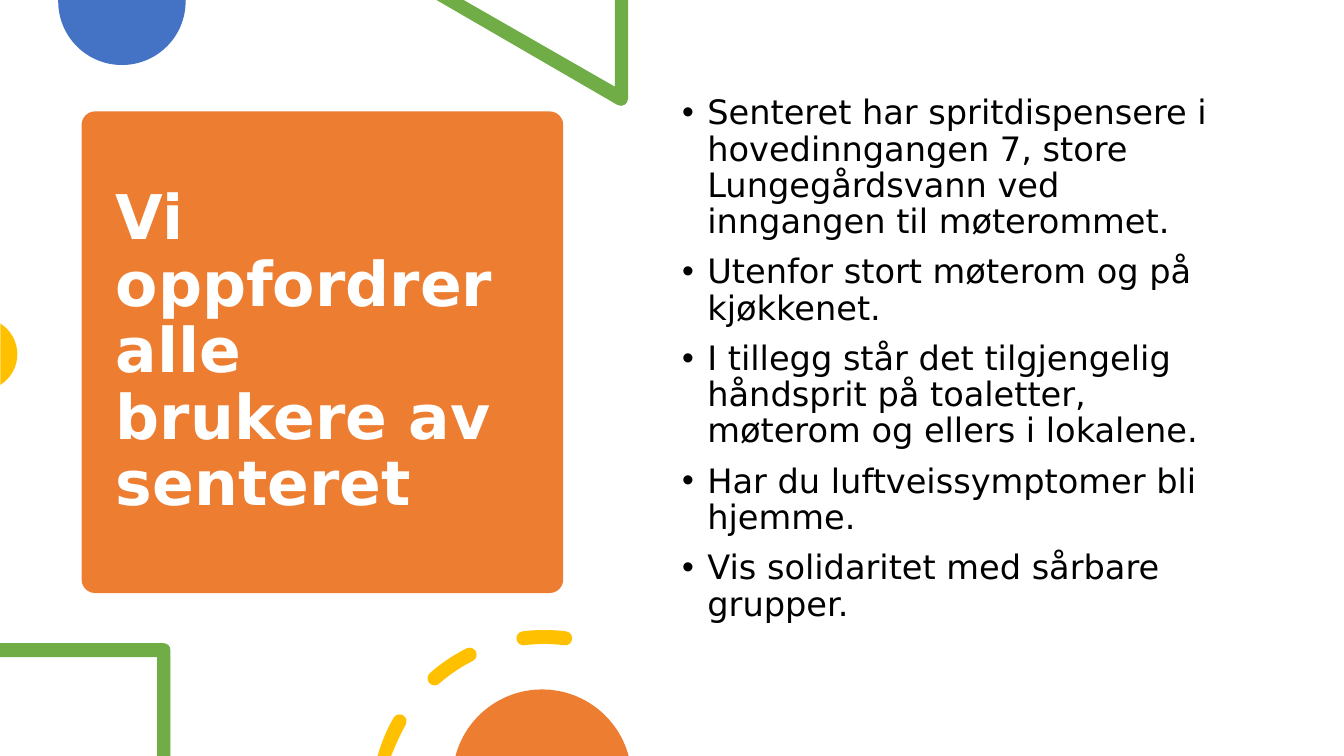
"""Build a slide with a title card, a bullet list and cropped shapes."""
import math

from lxml import etree
from pptx import Presentation
from pptx.dml.color import RGBColor
from pptx.enum import shapes, text
from pptx.oxml import ns
from pptx.util import Pt

FONT = "DejaVu Sans"
WIDTH, HEIGHT = 960, 540
FINE = 100
COLORS = {
    "blue": "4472C4",
    "green": "70AD47",
    "gold": "FFC000",
    "orange": "ED7D31",
    "white": "FFFFFF",
    "black": "000000",
}
TITLE = "Vi oppfordrer alle brukere av senteret"
ITEMS = [
    "Senteret har spritdispensere i hovedinngangen 7, store "
    "Lungegårdsvann ved inngangen til møterommet.",
    "Utenfor stort møterom og på kjøkkenet.",
    "I tillegg står det tilgjengelig håndsprit på toaletter, "
    "møterom og ellers i lokalene.",
    "Har du luftveissymptomer bli hjemme.",
    "Vis solidaritet med sårbare grupper.",
]


def color(name):
    """Return the named colour."""
    return RGBColor.from_string(COLORS[name])


def paint(shape, name):
    """Fill a shape with a plain colour, without line or shadow."""
    shape.shadow.inherit = False
    shape.fill.solid()
    shape.fill.fore_color.rgb = color(name)
    shape.line.fill.background()


def polar(x, y, radius, angle):
    """Return a point on a circle, in degrees clockwise from the top."""
    turn = math.radians(angle)
    return x + radius * math.sin(turn), y - radius * math.cos(turn)


def arc(x, y, radius, start, end):
    """Return an arc as points (x, y) and curve handles (x, y, True)."""
    count = math.ceil(abs(end - start) / 90)
    step = (end - start) / count
    pull = 4 / 3 * math.tan(math.radians(step) / 4)
    reach = radius * math.hypot(1, pull)
    lean = math.degrees(math.atan(pull))
    nodes = [polar(x, y, radius, start)]
    for i in range(count):
        low, high = start + i * step, start + (i + 1) * step
        nodes += [(*polar(x, y, reach, low + lean), True),
                  (*polar(x, y, reach, high - lean), True),
                  polar(x, y, radius, high)]
    return nodes


def dash(x, y, radius, start, end, half=5, cut=False):
    """Return a curved dash with round caps, or a plain cut at its start."""
    nodes = arc(x, y, radius + half, start, end)
    nodes += arc(*polar(x, y, radius, end), half, end, end + 180)[1:]
    nodes += arc(x, y, radius - half, end, start)[1:]
    if not cut:
        nodes += arc(*polar(x, y, radius, start), half, start + 180, start + 360)[1:]
    return [(node[0], min(node[1], HEIGHT), *node[2:]) for node in nodes]


def bend(shape, nodes):
    """Turn each pair of handles and its end point into one curve."""
    lines = list(shape._element.iter(ns.qn("a:lnTo")))
    first = 0
    while first < len(nodes):
        if len(nodes[first]) == 2:
            first += 1
            continue
        curve, *rest = lines[first:first + 3]
        curve.tag = ns.qn("a:cubicBezTo")
        for line in rest:
            curve.append(line[0])
            line.getparent().remove(line)
        first += 3


def outline(slide, name, *loops):
    """Draw one filled freeform from closed loops of nodes."""
    form, nodes = None, []
    for loop in loops:
        spots = [(round(x * FINE), round(y * FINE)) for x, y, *_ in loop]
        if form is None:
            form = slide.shapes.build_freeform(*spots[0], scale=Pt(1) / FINE)
        else:
            form.move_to(*spots[0])
        form.add_line_segments(spots[1:], close=True)
        nodes += loop[1:]
    shape = form.convert_to_shape()
    bend(shape, nodes)
    paint(shape, name)


def card(slide, x, y, width, height, name):
    """Draw the rounded card behind the title."""
    shape = slide.shapes.add_shape(
        shapes.MSO_SHAPE.ROUNDED_RECTANGLE, Pt(x), Pt(y), Pt(width), Pt(height))
    shape.adjustments[0] = 0.028
    paint(shape, name)


def bullet(para, indent):
    """Give a paragraph a hanging round bullet."""
    props = para._p.get_or_add_pPr()
    props.set("marL", str(Pt(indent)))
    props.set("indent", str(-Pt(indent)))
    etree.SubElement(props, ns.qn("a:buFont")).set("typeface", "Arial")
    etree.SubElement(props, ns.qn("a:buChar")).set("char", "•")


def write(slide, box, lines, size, name, bold=False, marked=False):
    """Add a wrapped text box with one paragraph per line."""
    frame = slide.shapes.add_textbox(*map(Pt, box)).text_frame
    frame.word_wrap = True
    anchor = text.MSO_ANCHOR.TOP if marked else text.MSO_ANCHOR.MIDDLE
    frame.vertical_anchor = anchor
    frame.text = "\n".join(lines)
    for i, para in enumerate(frame.paragraphs):
        para.line_spacing = 0.9
        para.space_before = Pt(10 if i else 0)
        if marked:
            bullet(para, 18)
        for run in para.runs:
            run.font.name = FONT
            run.font.size = Pt(size)
            run.font.bold = bold
            run.font.color.rgb = color(name)


def main():
    """Build and save the slide."""
    deck = Presentation()
    deck.slide_width, deck.slide_height = Pt(WIDTH), Pt(HEIGHT)
    slide = deck.slides.add_slide(deck.slide_layouts[6])

    card(slide, 58.3, 79.6, 344, 344, "orange")
    write(slide, (75.6, 87.8, 310.3, 328.3), [TITLE], 44, "white", bold=True)
    outline(slide, "blue", [(132.6, 0)] + arc(87.1, 1, 45.5, 90, 270) + [(41.6, 0)])
    triangle = [(448.6, 0), (439.2, 0), (439.2, 61.9), (331.2, 0), (311.8, 0)]
    outline(slide, "green", triangle + arc(443.5, 70.5, 5.1, 210, 90))
    outline(slide, "gold", arc(-13.5, 253, 25.9, 32, 148))
    write(slide, (480.2, 64.8, 414, 385.2), ITEMS, 24, "black", marked=True)
    frame = [(0, 459.4), (0, 469.4), (112.3, 469.4), (112.3, HEIGHT), (121.7, HEIGHT)]
    outline(slide, "green", frame + arc(116.9, 464.2, 4.8, 90, 0))
    ring = (388.8, 573.8, 118.8)
    outline(slide, "gold",
            dash(*ring, -74.1, -60.5, cut=True),
            dash(*ring, -41.3, -26.7),
            dash(*ring, -7.2, 7.2))
    outline(slide, "orange", arc(387.2, 556.5, 64, -75, 75))
    deck.save("out.pptx")


if __name__ == "__main__":
    main()
